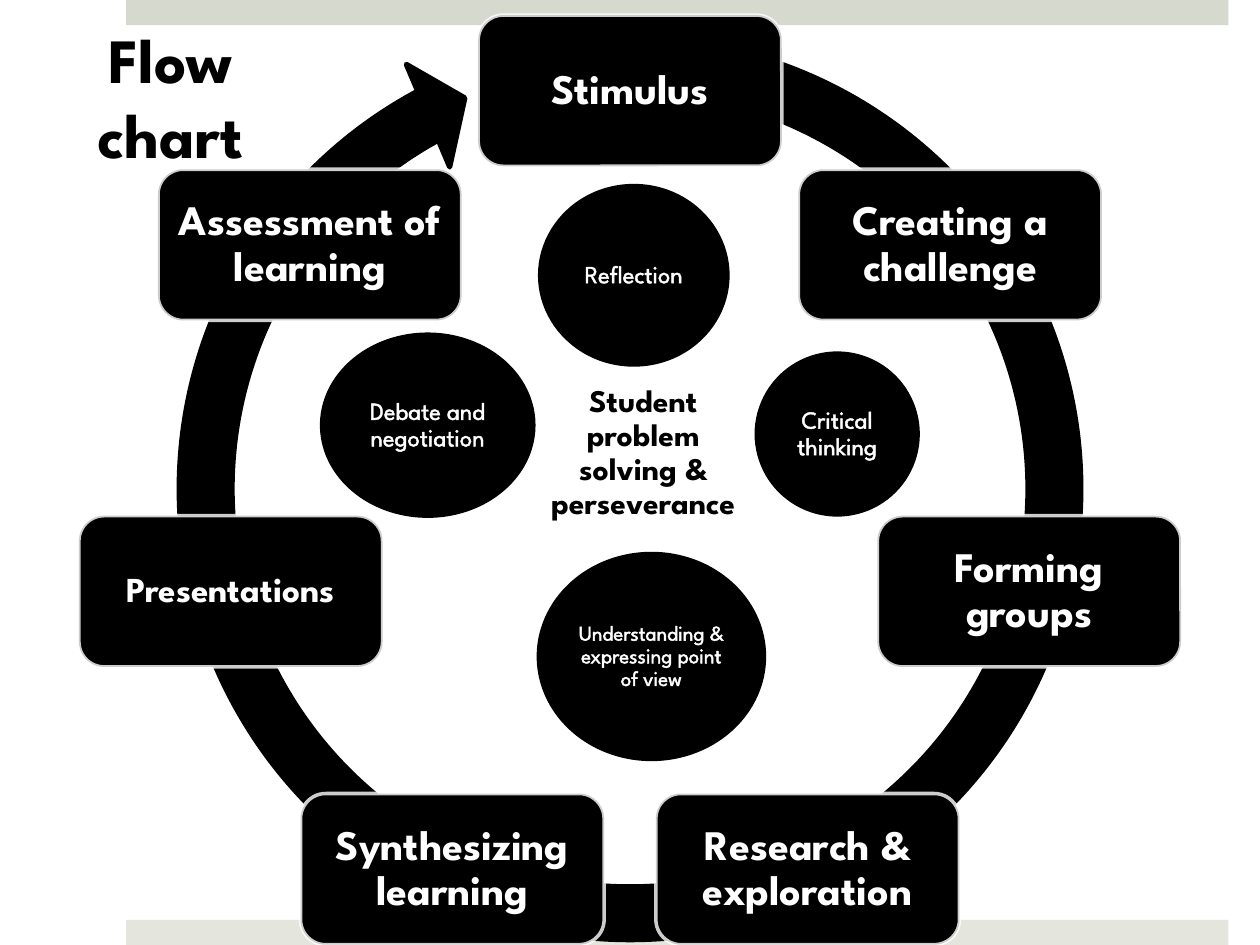
"""Build a flow chart slide: a ring of seven stages around student skills."""
import math
from pptx import Presentation, util as u
from pptx.dml import color
from pptx.enum import shapes, text
from pptx.oxml import ns, xmlchemy

FONT = "League Spartan"
BLACK, WHITE = "000000", "FFFFFF"
KINDS = shapes.MSO_SHAPE


def rgb(value):
    return color.RGBColor.from_string(value)


def write(frame, words, size, ink=WHITE, bold=False, inset=0.1, leading=0.9,
          anchor=text.MSO_ANCHOR.MIDDLE, outline=None):
    frame.word_wrap = True
    frame.auto_size = text.MSO_AUTO_SIZE.NONE
    frame.vertical_anchor = anchor
    frame.margin_left = frame.margin_right = u.Inches(inset)
    frame.margin_top = frame.margin_bottom = u.Inches(inset)
    paragraph = frame.paragraphs[0]
    paragraph.alignment = text.PP_ALIGN.CENTER
    paragraph.line_spacing = leading
    run = paragraph.add_run()
    run.text = words
    run.font.name, run.font.size, run.font.bold = FONT, u.Pt(size), bold
    run.font.color.rgb = rgb(ink)
    if outline:
        edge, points = outline
        stroke = xmlchemy.OxmlElement("a:ln")
        stroke.set("w", str(u.Pt(points)))
        fill = xmlchemy.OxmlElement("a:solidFill")
        shade = xmlchemy.OxmlElement("a:srgbClr")
        shade.set("val", edge)
        fill.append(shade)
        stroke.append(fill)
        run.font._element.insert(0, stroke)


class FlowSlide:
    def __init__(self, slide):
        self.slide = slide

    def title(self, words, left, top, width, height):
        heading = self.slide.shapes.title
        heading.left, heading.top = u.Inches(left), u.Inches(top)
        heading.width, heading.height = u.Inches(width), u.Inches(height)
        write(heading.text_frame, words, 36, BLACK, bold=True, inset=0.05, leading=1,
              anchor=text.MSO_ANCHOR.TOP, outline=("0D0D0D", 0.9))
        heading.text_frame.margin_left = heading.text_frame.margin_right = u.Inches(0.1)

    def block(self, kind, left, top, width, height, fill, line=None, points=3):
        item = self.slide.shapes.add_shape(
            kind, *(u.Inches(n) for n in (left, top, width, height)))
        item.shadow.inherit = False
        item.fill.solid()
        item.fill.fore_color.rgb = rgb(fill)
        if line:
            item.line.color.rgb = rgb(line)
            item.line.width = u.Pt(points)
        else:
            item.line.fill.background()
        return item

    def arrow_ring(self, left, top, size, adjustments):
        ring = self.block(KINDS.CIRCULAR_ARROW, left, top, size, size, BLACK, BLACK)
        for index, value in enumerate(adjustments):
            ring.adjustments[index] = value

    def stage(self, words, center_x, center_y, size, inset):
        width, height = 2.41, 1.2
        card = self.block(KINDS.ROUNDED_RECTANGLE, center_x - width / 2,
                          center_y - height / 2, width, height, BLACK, WHITE, 2)
        shade = card.line._ln.find(".//" + ns.qn("a:srgbClr"))
        alpha = xmlchemy.OxmlElement("a:alpha")
        alpha.set("val", "80000")
        shade.append(alpha)
        write(card.text_frame, words, size, bold=True, inset=inset)

    def core(self, words, *box):
        oval = self.block(KINDS.OVAL, *box, WHITE)
        write(oval.text_frame, words, 18, BLACK, bold=True, inset=0.03)

    def skill(self, words, size, *box):
        oval = self.block(KINDS.OVAL, *box, BLACK, BLACK)
        write(oval.text_frame, words, size, inset=0.02, outline=(WHITE, 1.45))


STAGES = ["Stimulus", "Creating a challenge", "Forming groups", "Research & exploration",
          "Synthesizing learning", "Presentations", "Assessment of learning"]
SKILLS = [
    ("Reflection", 14, 4.29, 1.48, 1.48, 1.41),
    ("Critical thinking", 14, 6.01, 2.81, 1.27, 1.27),
    ("Understanding & expressing point of view", 12, 4.28, 4.4, 1.78, 1.62),
    ("Debate and negotiation", 14, 2.56, 2.66, 1.67, 1.43),
]


def main():
    deck = Presentation()
    deck.slide_width, deck.slide_height = u.Inches(10), u.Inches(7.5)
    flow = FlowSlide(deck.slides.add_slide(deck.slide_layouts[5]))
    for top, fill in ((0, "D6D9CD"), (7.3, "E4E6DE")):
        flow.block(KINDS.RECTANGLE, 1, top, 8.75, 0.2, fill)
    flow.title("Flow chart", 0.15, 0.11, 2.41, 0.71)
    flow.arrow_ring(1.19, 0.07, 7.62, (0.055, 3.307, 144.948, 169.623, 0.058))

    center_x, center_y, radius = 5, 3.97, 3.25
    for index, stage in enumerate(STAGES):
        angle = 2 * math.pi * index / len(STAGES)
        size, inset = (20, 0.08) if stage == "Presentations" else (24, 0.1)
        flow.stage(stage, center_x + radius * math.sin(angle),
                   center_y - radius * math.cos(angle), size, inset)

    flow.core("Student problem solving & perseverance", 3.88, 3.08, 2.45, 1.04)
    for skill in SKILLS:
        flow.skill(*skill)
    deck.save("out.pptx")


if __name__ == "__main__":
    main()
